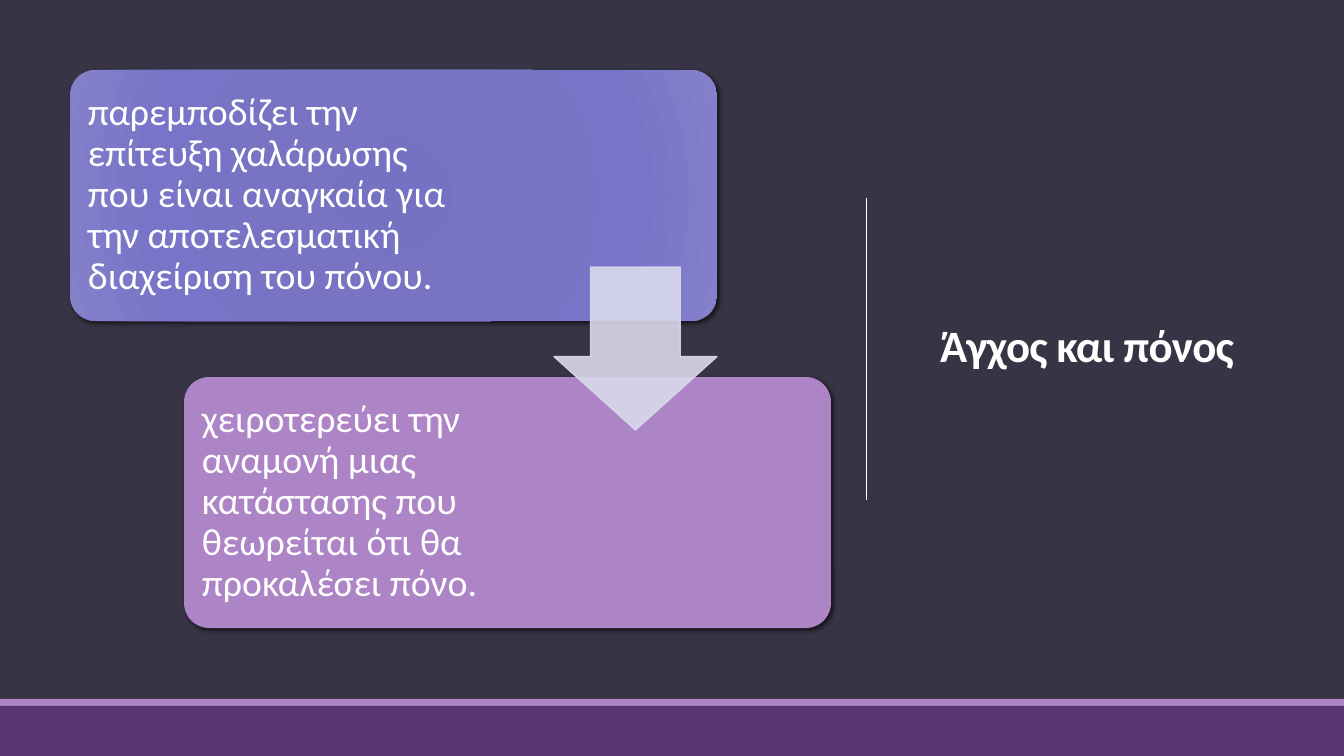
import pptx
import pptx.util
import pptx.dml.color
import pptx.enum.shapes
import pptx.enum.text
import pptx.oxml
import pptx.oxml.ns

RGBColor = pptx.dml.color.RGBColor
SHAPES = pptx.enum.shapes.MSO_SHAPE
ALIGN = pptx.enum.text.PP_ALIGN
ANCHOR = pptx.enum.text.MSO_ANCHOR
DRAWING = pptx.oxml.ns.nsdecls("a")

DARK = RGBColor(0x37, 0x35, 0x45)
WHITE = RGBColor(0xFF, 0xFF, 0xFF)
LILAC = RGBColor(0xAD, 0x84, 0xC6)
PURPLE = RGBColor(0x5A, 0x34, 0x71)
PALE = RGBColor(0xD9, 0xD9, 0xEB)
BLUE_STOPS = [
    (0, RGBColor(0x75, 0x72, 0xC3)),
    (34, RGBColor(0x78, 0x74, 0xC3)),
    (70, RGBColor(0x78, 0x74, 0xC8)),
    (100, RGBColor(0x84, 0x81, 0xCA)),
]

FONT = "Calibri"
TITLE = "Άγχος και πόνος"
TITLE_BOX = (901, 70, 372, 557)
CARDS = [
    ("παρεμποδίζει την επίτευξη χαλάρωσης που είναι αναγκαία για την αποτελεσματική διαχείριση του πόνου.", 388),
    ("χειροτερεύει την αναμονή μιας κατάστασης που θεωρείται ότι θα προκαλέσει πόνο.", 356),
]
CARD_LEFT, CARD_TOP, CARD_WIDTH, CARD_HEIGHT = 70, 70, 647, 251
STEP_X, STEP_Y = 114, 307
CARD_INSET = 7
ARROW_BOX = (554, 267, 163, 163)
BARS = [((0, 699, 1344, 7), LILAC), ((0, 706, 1344, 50), PURPLE)]
DIVIDER = (866, 198, 866, 500)


def px(*lengths):
    return [pptx.util.Inches(length / 100.8) for length in lengths]


def add_block(page, kind, box, color):
    shape = page.shapes.add_shape(kind, *px(*box))
    shape.shadow.inherit = False
    shape.fill.solid()
    shape.fill.fore_color.rgb = color
    shape.line.fill.background()
    return shape


def write(shape, text, size, spacing):
    frame = shape.text_frame
    frame.text = text
    frame.word_wrap = True
    frame.auto_size = pptx.enum.text.MSO_AUTO_SIZE.NONE
    frame.vertical_anchor = ANCHOR.MIDDLE
    para = frame.paragraphs[0]
    para.line_spacing = spacing
    span = para.runs[0]
    span.font.name = FONT
    span.font.size = pptx.util.Pt(size)
    span.font.color.rgb = WHITE
    return para


def set_radial_fill(shape, stops):
    marks = "".join(
        f'<a:gs pos="{place * 1000}"><a:srgbClr val="{color}"/></a:gs>' for place, color in stops
    )
    gradient = pptx.oxml.parse_xml(
        f'<a:gradFill {DRAWING} rotWithShape="1"><a:gsLst>{marks}</a:gsLst><a:path path="circle">'
        '<a:fillToRect l="100000" t="100000" r="100000" b="100000"/></a:path></a:gradFill>'
    )
    properties = shape._element.spPr
    solid = properties.find(pptx.oxml.ns.qn("a:solidFill"))
    properties.replace(solid, gradient)


def set_shadow(shape):
    effects = shape._element.spPr.find(pptx.oxml.ns.qn("a:effectLst"))
    effects.append(pptx.oxml.parse_xml(
        f'<a:outerShdw {DRAWING} blurRad="38100" dist="25400" dir="2700000" algn="br" rotWithShape="0">'
        '<a:srgbClr val="000000"><a:alpha val="60000"/></a:srgbClr></a:outerShdw>'
    ))


def set_opacity(shape, percent):
    for color in shape._element.spPr.iter(pptx.oxml.ns.qn("a:srgbClr")):
        color.append(pptx.oxml.parse_xml(f'<a:alpha {DRAWING} val="{percent * 1000}"/>'))


def add_title(page):
    title = page.shapes.title
    title.left, title.top, title.width, title.height = px(*TITLE_BOX)
    para = write(title, TITLE, 32, 0.85)
    para.alignment = ALIGN.CENTER
    para.runs[0].font.bold = True
    para.runs[0]._r.get_or_add_rPr().set("spc", "-50")


def add_divider(page):
    divider = page.shapes.add_connector(pptx.enum.shapes.MSO_CONNECTOR.STRAIGHT, *px(*DIVIDER))
    divider.line.color.rgb = WHITE
    divider.line.width = pptx.util.Pt(0.5)
    divider._element.spPr.append(pptx.oxml.parse_xml(f"<a:effectLst {DRAWING}/>"))


def add_cards(page):
    for index, (text, text_width) in enumerate(CARDS):
        left, top = CARD_LEFT + index * STEP_X, CARD_TOP + index * STEP_Y
        card = add_block(page, SHAPES.ROUNDED_RECTANGLE, (left, top, CARD_WIDTH, CARD_HEIGHT), LILAC)
        card.adjustments[0] = 0.1
        set_shadow(card)
        if index == 0:
            set_radial_fill(card, BLUE_STOPS)
        text_box = (left + CARD_INSET, top + CARD_INSET, text_width, CARD_HEIGHT - 2 * CARD_INSET)
        box = page.shapes.add_textbox(*px(*text_box))
        write(box, text, 27, 0.9)
        frame = box.text_frame
        frame.margin_left, frame.margin_top, frame.margin_right, frame.margin_bottom = px(11, 11, 11, 11)


def add_arrow(page):
    arrow = add_block(page, SHAPES.DOWN_ARROW, ARROW_BOX, PALE)
    arrow.adjustments[0] = 0.55
    arrow.adjustments[1] = 0.45
    arrow.line.color.rgb = PALE
    arrow.line.width = pptx.util.Pt(1)
    set_opacity(arrow, 90)


def main():
    deck = pptx.Presentation()
    deck.slide_width, deck.slide_height = px(1344, 756)
    page = deck.slides.add_slide(deck.slide_layouts[5])
    page.background.fill.solid()
    page.background.fill.fore_color.rgb = DARK
    add_title(page)
    add_divider(page)
    for box, color in BARS:
        add_block(page, SHAPES.RECTANGLE, box, color)
    add_cards(page)
    add_arrow(page)
    deck.save("out.pptx")


if __name__ == "__main__":
    main()
